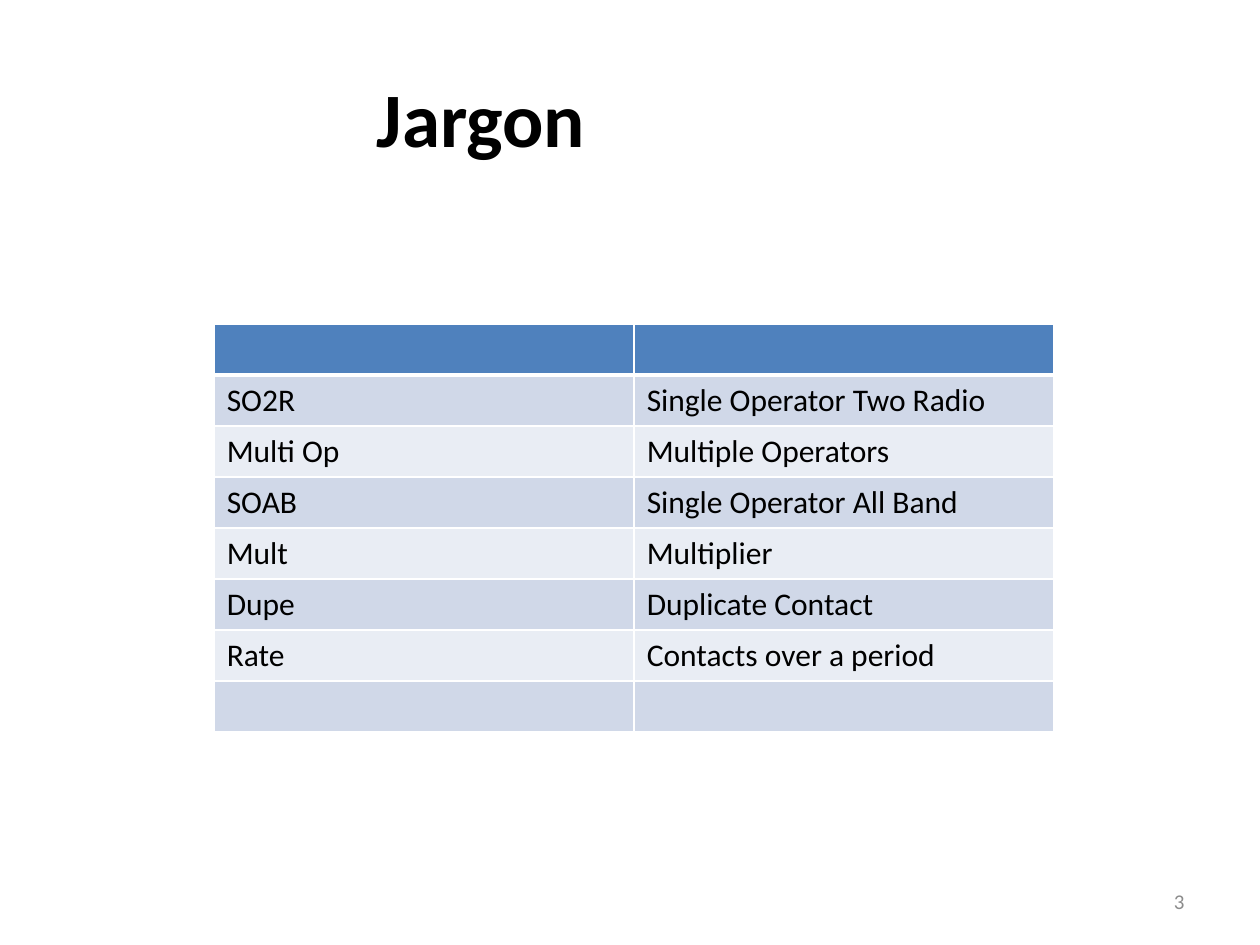
from lxml.etree import SubElement as Sub
from pptx import Presentation
from pptx.dml.color import RGBColor as RGB
from pptx.enum.text import MSO_ANCHOR as Anchor, PP_ALIGN as Align
from pptx.oxml.ns import qn
from pptx.util import Inches, Pt

COLORS = {"ink": "000000", "gray": "8C8C8C", "line": "FFFFFF",
          "head": "4F81BD", "dark": "D0D8E8", "light": "E9EDF4"}
TERMS = [("", ""),
         ("SO2R", "Single Operator Two Radio"),
         ("Multi Op", "Multiple Operators"),
         ("SOAB", "Single Operator All Band"),
         ("Mult", "Multiplier"),
         ("Dupe", "Duplicate Contact"),
         ("Rate", "Contacts over a period"),
         ("", "")]


class Deck:
    """Holds the style and the current slide; places are shares of its size."""

    def __init__(self, wide, high, font="Calibri"):
        self.prs = Presentation()
        self.prs.slide_width, self.prs.slide_height = Inches(wide), Inches(high)
        self.font = font
        self.slide = self.prs.slides.add_slide(self.prs.slide_layouts[6])

    def place(self, x, y, w, h):
        wide, high = self.prs.slide_width, self.prs.slide_height
        return int(x * wide), int(y * high), int(w * wide), int(h * high)

    def style(self, para, size, color="ink", bold=False):
        for item in (para, *para.runs):
            item.font.name, item.font.size = self.font, Pt(size)
            item.font.bold = bold
            item.font.color.rgb = RGB.from_string(COLORS[color])

    def text(self, words, box, size, align, color="ink", bold=False, inset=0.1):
        """Add a text box; inset is its right margin in inches."""
        frame = self.slide.shapes.add_textbox(*self.place(*box)).text_frame
        frame.word_wrap = True
        frame.vertical_anchor = Anchor.MIDDLE
        frame.margin_right = Inches(inset)
        frame.text = words
        para = frame.paragraphs[0]
        para.alignment = align
        self.style(para, size, color, bold)

    def edges(self, cell, top, bottom):
        """Draw the four borders, which must come before the fill."""
        props = cell._tc.get_or_add_tcPr()
        for side, width in (("L", 1), ("R", 1), ("T", top), ("B", bottom)):
            line = Sub(props, qn(f"a:ln{side}"), w=str(Pt(width)))
            fill = Sub(line, qn("a:solidFill"))
            Sub(fill, qn("a:srgbClr"), val=COLORS["line"])

    def table(self, rows, box, size):
        grid = self.slide.shapes.add_table(
            len(rows), len(rows[0]), *self.place(*box)).table
        for r, row in enumerate(rows):
            shade = "head" if r == 0 else "dark" if r % 2 else "light"
            for c, words in enumerate(row):
                cell = grid.cell(r, c)
                self.edges(cell, 3 if r == 1 else 1, 3 if r == 0 else 1)
                cell.fill.solid()
                cell.fill.fore_color.rgb = RGB.from_string(COLORS[shade])
                cell.text = words
                self.style(cell.text_frame.paragraphs[0], size)

    def save(self):
        self.prs.save("out.pptx")


def main():
    deck = Deck(10, 7.5)
    deck.text("Jargon", (0.05, 0.04, 0.9, 1 / 6), 44, Align.CENTER,
              bold=True, inset=2.46)
    deck.table(TERMS, (0.17, 0.343, 2 / 3, 0.432), 18)
    deck.text("3", (0.717, 0.927, 0.233, 0.053), 12, Align.RIGHT, "gray")
    deck.save()


if __name__ == "__main__":
    main()
